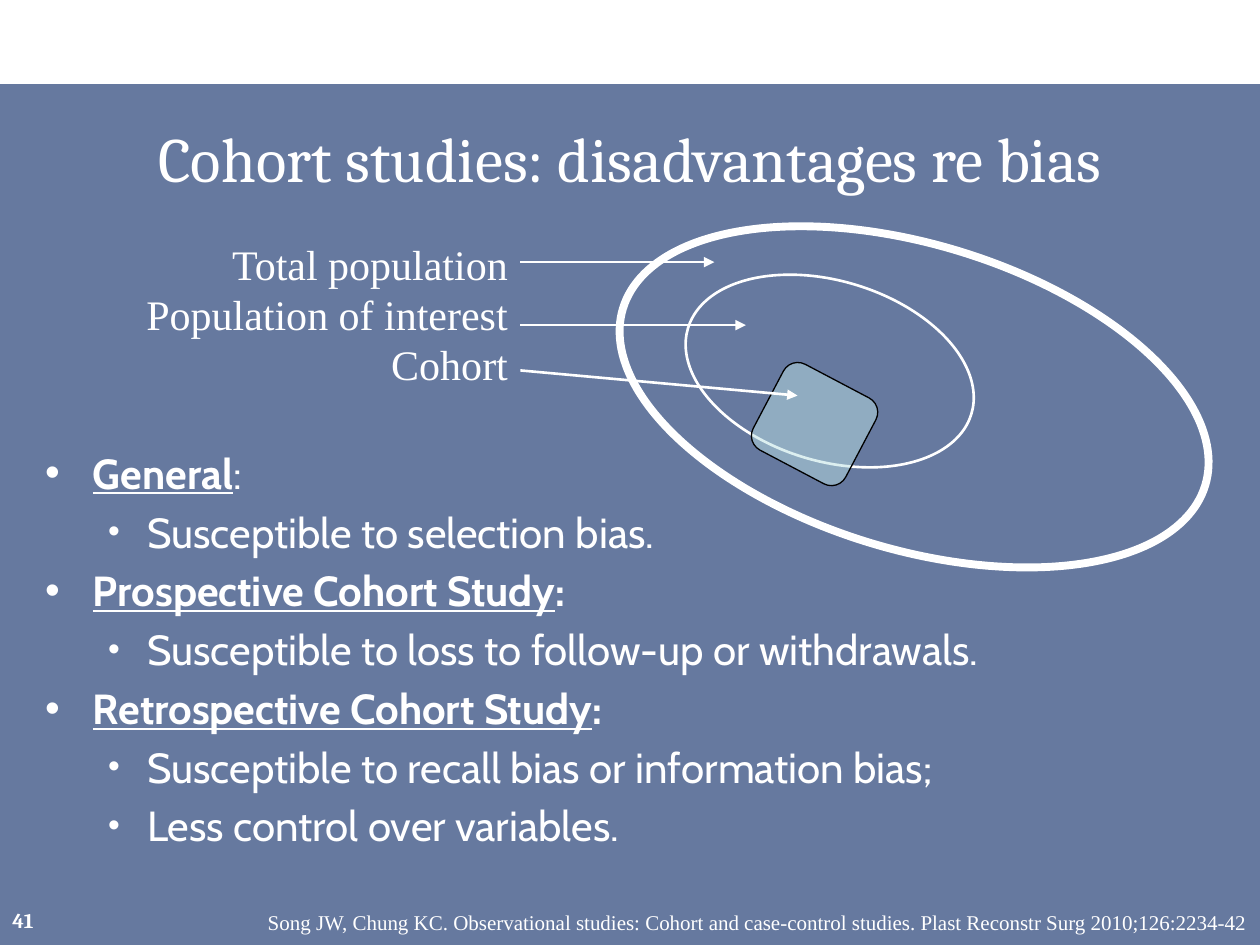
import collections

import lxml.etree
import pptx
import pptx.dml.color
import pptx.enum.shapes
import pptx.enum.text
import pptx.oxml.ns
import pptx.util

COLORS = {"white": "FFFFFF", "navy": "002060", "cohort": "BBE0E3", "black": "000000"}
FONTS = {"title": "Cambria", "body": "Cabin", "label": "Times New Roman"}
ALIGN = pptx.enum.text.PP_ALIGN
ANCHOR = pptx.enum.text.MSO_ANCHOR
SHAPE = pptx.enum.shapes.MSO_SHAPE

SLIDE_WIDTH = pptx.util.Inches(10)
SLIDE_HEIGHT = pptx.util.Inches(7.5)
COLUMN = SLIDE_WIDTH / 40
ROW = SLIDE_HEIGHT / 30

Box = collections.namedtuple("Box", "column row columns rows")

BULLETS = [  # level, runs as (text, bold, underlined)
    (0, [("General", True, True), (":", False, False)]),
    (1, [("Susceptible to selection bias.", False, False)]),
    (0, [("Prospective Cohort Study", True, True), (":", True, False)]),
    (1, [("Susceptible to loss to follow-up or withdrawals.", False, False)]),
    (0, [("Retrospective Cohort Study", True, True), (":", True, False)]),
    (1, [("Susceptible to recall bias or information bias;", False, False)]),
    (1, [("Less control over variables.", False, False)]),
]
LEVELS = [(0.38, -0.38, 100), (0.81, -0.31, 80)]  # margin, indent, bullet size in %


def color(name):
    return pptx.dml.color.RGBColor.from_string(COLORS[name])


def inside(box, column, row, columns, rows):
    return Box(box.column + column, box.row + row, columns, rows)


def lengths(box):
    return [round(n) for n in (box.column * COLUMN, box.row * ROW,
                               box.columns * COLUMN, box.rows * ROW)]


def add_child(parent, tag, **attributes):
    return lxml.etree.SubElement(parent, pptx.oxml.ns.qn(tag), attributes)


def set_font(font, name, size):
    font.name = name
    font.size = pptx.util.Pt(size)
    font.color.rgb = color("white")


def add_text(slide, box, lines, font, size, align=ALIGN.LEFT, anchor=ANCHOR.TOP, wrap=True):
    frame = slide.shapes.add_textbox(*lengths(box)).text_frame
    frame.word_wrap = wrap
    frame.vertical_anchor = anchor
    frame.text = "\n".join(lines)
    for paragraph in frame.paragraphs:
        paragraph.alignment = align
        set_font(paragraph.font, font, size)
    return frame


def add_figure(slide, box, kind, rotation=0, fill=None, opacity=100, line=None, width=1):
    shape = slide.shapes.add_shape(kind, *lengths(box))
    shape.shadow.inherit = False
    shape.rotation = rotation
    if fill:
        shape.fill.solid()
        shape.fill.fore_color.rgb = color(fill)
        fill_color = shape.fill._xPr.find(".//" + pptx.oxml.ns.qn("a:srgbClr"))
        add_child(fill_color, "a:alpha", val=str(opacity * 1000))
    else:
        shape.fill.background()
    if line:
        shape.line.color.rgb = color(line)
        shape.line.width = pptx.util.Pt(width)
    else:
        shape.line.fill.background()


def add_arrow(slide, box, start, end):
    (left, top), (right, bottom) = [
        lengths(inside(box, *point, 0, 0))[:2] for point in (start, end)]
    connector = slide.shapes.add_connector(
        pptx.enum.shapes.MSO_CONNECTOR.STRAIGHT, left, top, right, bottom)
    connector.line.color.rgb = color("white")
    connector.line.width = pptx.util.Pt(1.5)
    add_child(connector.line._get_or_add_ln(), "a:tailEnd", type="triangle")
    add_child(connector._element.spPr, "a:effectLst")


def add_bullets(slide, box):
    frame = slide.shapes.add_textbox(*lengths(box)).text_frame
    frame.word_wrap = True
    for index, (level, runs) in enumerate(BULLETS):
        paragraph = frame.add_paragraph() if index else frame.paragraphs[0]
        paragraph.level = level
        if index:
            paragraph.space_before = pptx.util.Pt(4.8)
        margin, indent, bullet_size = LEVELS[level]
        properties = paragraph._p.get_or_add_pPr()
        properties.set("marL", str(pptx.util.Inches(margin)))
        properties.set("indent", str(pptx.util.Inches(indent)))
        bullet_color = add_child(properties, "a:buClr")
        add_child(bullet_color, "a:srgbClr", val=COLORS["white"])
        add_child(properties, "a:buSzPct", val=str(bullet_size * 1000))
        add_child(properties, "a:buFont", typeface="Arial")
        add_child(properties, "a:buChar", char="•")
        set_font(paragraph.font, FONTS["body"], 24)
        for text, bold, underlined in runs:
            run = paragraph.add_run()
            run.text = text
            run.font.bold = bold
            run.font.underline = underlined


def add_diagram(slide, box):
    # Nested populations
    tilt = 16.9
    add_figure(slide, inside(box, 15.36, 0.76, 19.32, 9.68), SHAPE.OVAL, tilt,
               line="white", width=4.5)
    add_figure(slide, inside(box, 17.64, 1.92, 9.4, 5.72), SHAPE.OVAL, tilt,
               line="white", width=1.5)
    add_figure(slide, inside(box, 20.32, 4.8, 3.08, 3.32), SHAPE.ROUNDED_RECTANGLE, 297.8,
               fill="cohort", opacity=50, line="black", width=0.75)
    # Labels and their arrows
    add_text(slide, inside(box, 0.12, 0.36, 12.4, 5.24),
             ["Total population", "Population of interest", "Cohort"],
             FONTS["label"], 24, ALIGN.RIGHT, wrap=False)
    for start_row, end in [(1.32, (18.68, 1.32)), (3.32, (19.68, 3.32)), (4.76, (21.32, 5.56))]:
        add_arrow(slide, box, (12.52, start_row), end)


def add_footer(slide, box):
    number = add_text(slide, inside(box, 0, 0, 2, box.rows), ["41"],
                      FONTS["title"], 12, anchor=ANCHOR.MIDDLE)
    number.paragraphs[0].font.bold = True
    add_text(slide, inside(box, 3.12, 0.28, box.columns - 3.12, 1.2),
             ["Song JW, Chung KC. Observational studies: Cohort and case-control studies. "
              "Plast Reconstr Surg 2010;126:2234-42"], FONTS["label"], 12, ALIGN.RIGHT)


def main():
    presentation = pptx.Presentation()
    presentation.slide_width = SLIDE_WIDTH
    presentation.slide_height = SLIDE_HEIGHT
    slide = presentation.slides.add_slide(presentation.slide_layouts[6])

    # Background panel and title
    add_figure(slide, Box(0, 2.67, 40, 27.33), SHAPE.RECTANGLE, fill="navy", opacity=60)
    add_text(slide, Box(1, 3.33, 38, 3.33), ["Cohort studies: disadvantages re bias"],
             FONTS["title"], 36, ALIGN.CENTER, ANCHOR.MIDDLE)

    add_bullets(slide, Box(1.04, 14, 38, 13.68))
    add_footer(slide, Box(0, 28.4, 40, 1.6))
    add_diagram(slide, Box(4, 7, 36, 11))
    presentation.save("out.pptx")


if __name__ == "__main__":
    main()
